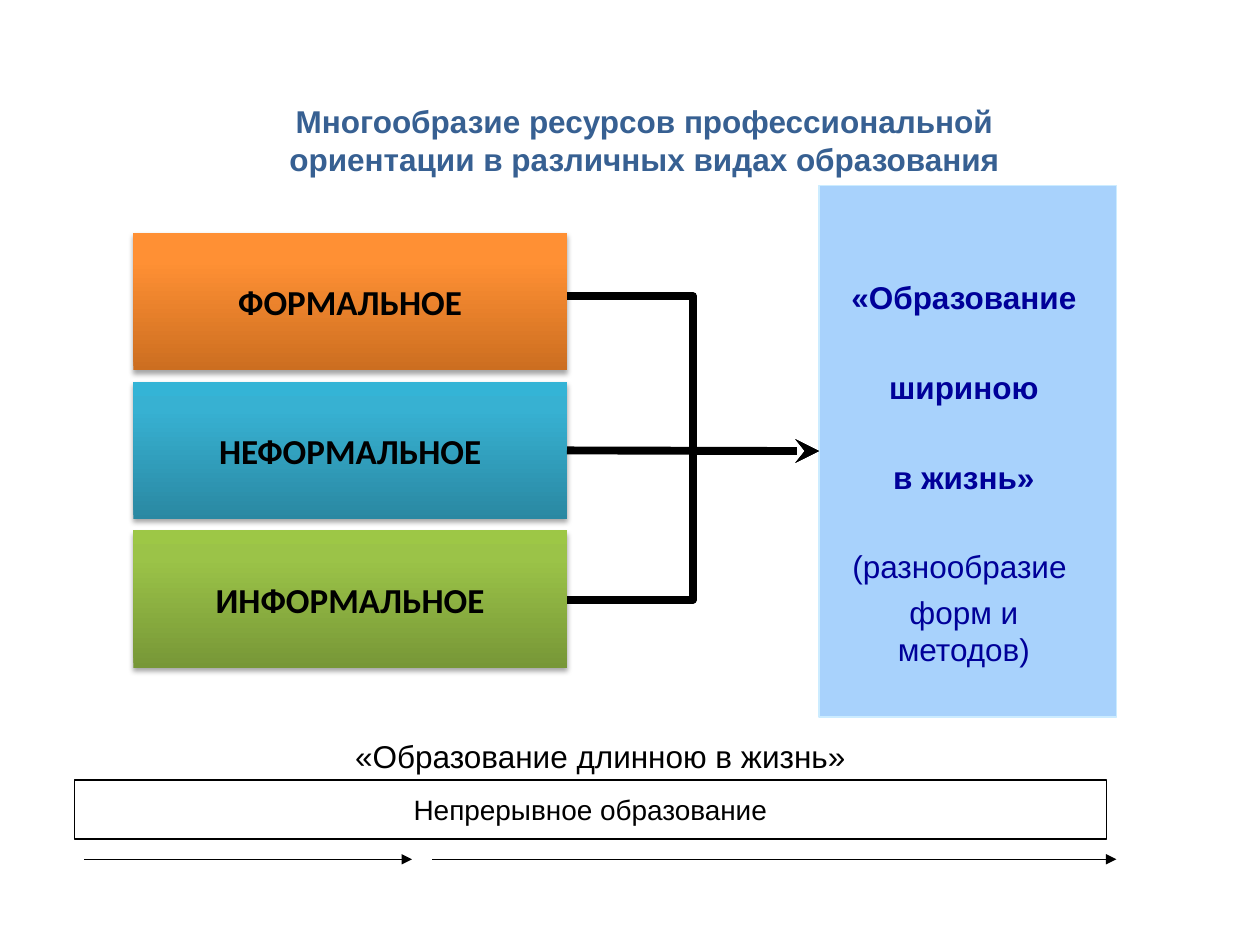
from lxml.etree import SubElement
from pptx import Presentation
from pptx.dml.color import RGBColor
from pptx.enum.shapes import MSO_CONNECTOR as LINK, MSO_SHAPE as SHAPE
from pptx.enum.text import MSO_ANCHOR as ANCHOR, MSO_AUTO_SIZE as FIT, PP_ALIGN as ALIGN
from pptx.oxml.ns import qn
from pptx.util import Inches, Pt

TITLE = "Многообразие ресурсов профессиональной ориентации в различных видах образования"
KINDS = [
    ("ФОРМАЛЬНОЕ", ("CC6E20", "FF9034", "FF9136")),
    ("НЕФОРМАЛЬНОЕ", ("2A88A2", "37B1D2", "34B4D6")),
    ("ИНФОРМАЛЬНОЕ", ("779737", "9BC348", "9DC746")),
]
STOPS = (0, 80, 100)
BREADTH = [
    ("«Образование", True, 0),
    ("шириною", True, 29.6),
    ("в жизнь»", True, 29.6),
    ("(разнообразие ", False, 29.6),
    ("форм и\vметодов)", False, 4.4),
]
LENGTH = "«Образование длинною в жизнь»"
CONTINUOUS = "Непрерывное образование"
TIMELINE = [(0.67, 3.27), (3.43, 8.86)]

KIND_LEFT, KIND_TOP, KIND_WIDTH, KIND_HEIGHT, KIND_STEP = 1.06, 1.85, 3.44, 1.09, 1.18
PANEL = (6.5, 1.47, 2.36, 4.22)
MIDDLE = PANEL[1] + PANEL[3] / 2
KIND_RIGHT = KIND_LEFT + KIND_WIDTH


def color(value):
    return RGBColor.from_string(value)


def write(shape, lines, size, ink, font="Arial", anchor=ANCHOR.TOP):
    frame = shape.text_frame
    frame.word_wrap = True
    frame.auto_size = FIT.NONE
    frame.vertical_anchor = anchor
    for index, (text, bold, before) in enumerate(lines):
        para = frame.add_paragraph() if index else frame.paragraphs[0]
        para.text = text
        para.alignment = ALIGN.CENTER
        para.space_before = Pt(before)
        para.font.name = font
        para.font.size = Pt(size)
        para.font.bold = bold
        para.font.color.rgb = color(ink)


def add_box(page, place, line=None, fill=None):
    box = page.shapes.add_shape(SHAPE.RECTANGLE, *map(Inches, place))
    box.shadow.inherit = False
    if fill:
        box.fill.solid()
        box.fill.fore_color.rgb = color(fill)
    else:
        box.fill.background()
    if line:
        box.line.color.rgb = color(line)
        box.line.width = Pt(0.75)
    else:
        box.line.fill.background()
    return box


def add_color(parent, value):
    return SubElement(parent, qn("a:srgbClr"), val=value)


def shade(box, colors):
    box.fill.gradient()
    box.fill.gradient_angle = 90
    properties = box.element.spPr
    stops = properties.find(qn("a:gradFill")).find(qn("a:gsLst"))
    for stop in list(stops):
        stops.remove(stop)
    for position, value in zip(STOPS, colors):
        add_color(SubElement(stops, qn("a:gs"), pos=str(position * 1000)), value)
    shadow = SubElement(properties.find(qn("a:effectLst")), qn("a:outerShdw"),
                        blurRad="40000", dist="23000", dir="5400000", rotWithShape="0")
    SubElement(add_color(shadow, "000000"), qn("a:alpha"), val="35000")


def add_arrow(page, kind, start, end, width, head):
    arrow = page.shapes.add_connector(kind, *map(Inches, start + end))
    arrow.line.color.rgb = color("000000")
    arrow.line.width = Pt(width)
    SubElement(arrow.line._get_or_add_ln(), qn("a:tailEnd"), type=head)
    SubElement(arrow.element.spPr, qn("a:effectLst"))
    return arrow


def add_text(page, place, lines, size, ink):
    write(page.shapes.add_textbox(*map(Inches, place)), lines, size, ink)


def main():
    """Build the slide on kinds of education and save it."""
    deck = Presentation()
    deck.slide_width, deck.slide_height = Inches(10), Inches(7.5)
    page = deck.slides.add_slide(deck.slide_layouts[5])

    title = page.shapes.title
    title.left, title.top, title.width, title.height = map(Inches, (1.77, 0.76, 6.69, 0.7))
    write(title, [(TITLE, True, 0)], 18, "376092")

    for start, end in TIMELINE:
        add_arrow(page, LINK.STRAIGHT, (start, 6.82), (end, 6.82), 0.75, "triangle")
    band = add_box(page, (0.59, 6.19, 8.19, 0.47), line="000000")
    write(band, [(CONTINUOUS, False, 0)], 16, "000000", anchor=ANCHOR.MIDDLE)
    add_text(page, (0.67, 5.8, 8.19, 0.4), [(LENGTH, False, 0)], 18, "000000")

    panel = add_box(page, PANEL, line="CCECFF", fill="A8D2FC")
    add_text(page, (6.56, 2.16, 2.18, 3.22), BREADTH, 18, "000099")

    boxes = []
    for index, (name, colors) in enumerate(KINDS):
        top = KIND_TOP + index * KIND_STEP
        box = add_box(page, (KIND_LEFT, top, KIND_WIDTH, KIND_HEIGHT))
        shade(box, colors)
        write(box, [(name, True, 0)], 20, "000000", "Calibri", ANCHOR.MIDDLE)
        boxes.append(box)

    target = (PANEL[0], MIDDLE)
    for height in (2.35, 4.76):
        add_arrow(page, LINK.ELBOW, (KIND_RIGHT, height), target, 4.5, "stealth")
    center = add_arrow(page, LINK.STRAIGHT, (KIND_RIGHT, MIDDLE), target, 4.5, "stealth")
    center.begin_connect(boxes[1], 3)
    center.end_connect(panel, 1)

    deck.save("out.pptx")


if __name__ == "__main__":
    main()
